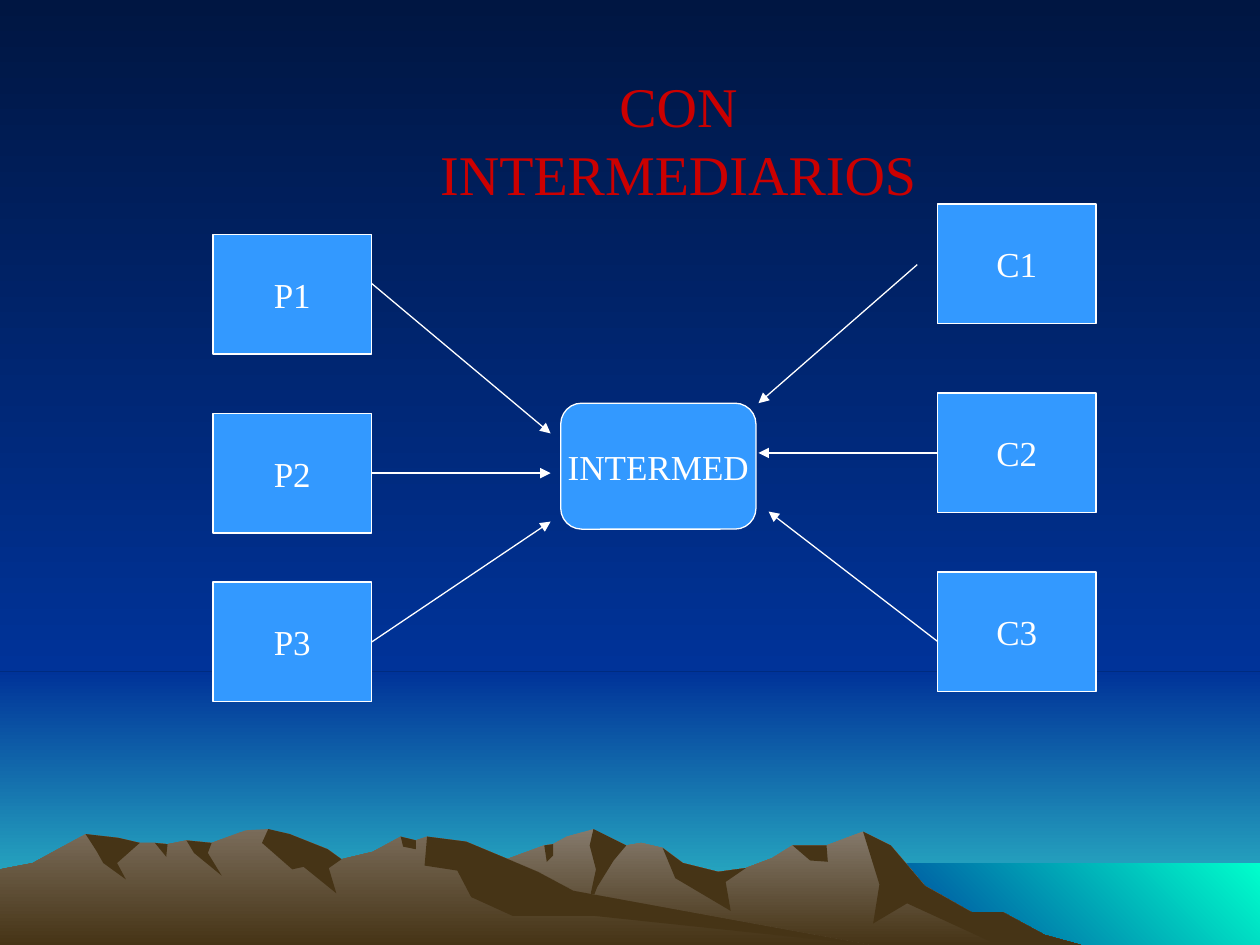
from dataclasses import dataclass

from lxml.etree import SubElement
from pptx import Presentation
from pptx.dml.color import RGBColor
from pptx.enum.shapes import MSO_CONNECTOR, MSO_SHAPE
from pptx.enum.text import MSO_ANCHOR, PP_ALIGN
from pptx.oxml.ns import qn
from pptx.util import Inches, Pt

FONT = "Times New Roman"
WHITE = RGBColor(0xFF, 0xFF, 0xFF)
RED = RGBColor(0xCC, 0x00, 0x00)
BOX_BLUE = RGBColor(0x33, 0x99, 0xFF)
NIGHT = RGBColor(0x00, 0x16, 0x42)
DEEP_BLUE = RGBColor(0x00, 0x33, 0x99)
HORIZON = RGBColor(0x33, 0xCC, 0xCC)
SEA_GREEN = RGBColor(0x00, 0xFF, 0xCC)
EARTH = RGBColor(0x46, 0x34, 0x16)
FAR_ROCK = RGBColor(0x85, 0x7A, 0x6C)
NEAR_ROCK = RGBColor(0x7A, 0x6C, 0x5A)

PAGE_WIDTH, PAGE_HEIGHT = 10, 7.5
SKY_HEIGHT, SEA_LEFT, SEA_TOP = 5.33, 6.83, 6.85
DOWN, UP_RIGHT = 270, 45
BOX_WIDTH, BOX_HEIGHT = 1.26, 0.95
PRODUCER_LEFT, CONSUMER_LEFT = 1.69, 7.44
LEFT_SIDE, RIGHT_SIDE = 1, 3


@dataclass
class Mountains:
    rock: RGBColor
    skyline: list
    folds: dict


@dataclass
class Party:
    label: str
    top: float
    tip: tuple
    start: tuple = None

    @property
    def middle(self):
        return self.top + BOX_HEIGHT / 2


FAR_MOUNTAINS = Mountains(
    FAR_ROCK,
    skyline=[
        (2.58, 7.5), (3.27, 7.09), (3.94, 6.85), (4.32, 6.71), (4.39, 6.7), (4.5, 6.64),
        (4.71, 6.58), (4.97, 6.71), (5.09, 6.69), (5.26, 6.73), (5.42, 6.85), (5.7, 6.92),
        (5.92, 6.89), (6.13, 6.81), (6.29, 6.71), (6.56, 6.71), (6.85, 6.6), (7.07, 6.71),
        (7.34, 7.03), (7.71, 7.24), (7.96, 7.24), (8.29, 7.42), (8.58, 7.5)],
    folds={
        (4.32, 4.39): [(4.39, 6.79), (4.34, 6.84)],
        (4.71, 4.97): [(4.87, 6.83), (4.74, 7.04), (4.65, 7.27), (4.73, 6.9), (4.68, 6.71)],
        (5.26, 5.92): [(5.76, 7), (5.8, 7.23), (5.36, 6.97)],
        (6.29, 6.56): [(6.57, 6.84), (6.43, 6.83)],
        (6.85, 8.58): [(7.92, 7.5), (7.2, 7.17), (6.93, 7.33), (6.98, 7.02)]})

NEAR_MOUNTAINS = Mountains(
    NEAR_ROCK,
    skyline=[
        (0, 6.9), (0.26, 6.85), (0.46, 6.74), (0.68, 6.62), (0.94, 6.65), (1.11, 6.69),
        (1.23, 6.69), (1.33, 6.7), (1.48, 6.67), (1.68, 6.69), (1.95, 6.59), (2.13, 6.58),
        (2.3, 6.62), (2.6, 6.74), (2.71, 6.82), (2.96, 6.76), (3.18, 6.64), (3.3, 6.67),
        (3.39, 6.64), (3.7, 6.68), (4.01, 6.81), (4.27, 6.92), (4.55, 7.07), (6.9, 7.5)],
    folds={
        (0.68, 1.11): [(0.93, 6.85), (1, 6.98), (0.82, 6.85), (0.77, 6.76)],
        (1.23, 1.33): [(1.32, 6.8)],
        (1.48, 1.68): [(1.65, 6.77), (1.76, 6.95), (1.54, 6.77)],
        (2.13, 2.71): [(2.61, 6.89), (2.67, 7.09), (2.41, 6.88), (2.32, 6.9), (2.08, 6.69)],
        (3.18, 3.3): [(3.3, 6.74), (3.2, 6.72)],
        (3.39, 6.9): [(4.72, 7.27), (4.07, 7.27), (3.74, 7.12), (3.63, 6.91), (3.37, 6.87)]})

PRODUCERS = [
    Party("P1", 1.86, tip=(4.37, 3.44), start=(2.95, 2.25)),
    Party("P2", 3.28, tip=(4.37, 3.755)),
    Party("P3", 4.62, tip=(4.37, 4.14))]
CONSUMERS = [
    Party("C1", 1.62, tip=(6.02, 3.2), start=(7.28, 2.1)),
    Party("C2", 3.12, tip=(6.02, 3.595)),
    Party("C3", 4.54, tip=(6.1, 4.06), start=(7.44, 5.09))]


def fill_gradient(fill, start, end, angle=DOWN):
    fill.gradient()
    fill.gradient_angle = angle
    for stop, color in zip(fill.gradient_stops, (start, end)):
        stop.color.rgb = color


def fill_solid(shape, color):
    shape.fill.solid()
    shape.fill.fore_color.rgb = color


def add_band(page, left, top, width, height, start, end, angle=DOWN):
    band = page.shapes.add_shape(
        MSO_SHAPE.RECTANGLE, Inches(left), Inches(top), Inches(width), Inches(height))
    band.shadow.inherit = False
    band.line.fill.background()
    fill_gradient(band.fill, start, end, angle)


def add_outline(page, points):
    corners = [(Inches(across), Inches(down)) for across, down in points]
    builder = page.shapes.build_freeform(*corners[0])
    builder.add_line_segments(corners[1:], close=True)
    outline = builder.convert_to_shape()
    outline.shadow.inherit = False
    outline.line.fill.background()
    return outline


def add_mountains(page, mountains):
    skyline = mountains.skyline
    base = [(skyline[-1][0], PAGE_HEIGHT), (skyline[0][0], PAGE_HEIGHT)]
    fill_gradient(add_outline(page, skyline + base).fill, mountains.rock, EARTH)
    for (left, right), foot in mountains.folds.items():
        crest = [point for point in skyline if left <= point[0] <= right]
        fill_solid(add_outline(page, crest + foot), EARTH)


def add_landscape(page):
    add_band(page, 0, SKY_HEIGHT, PAGE_WIDTH, PAGE_HEIGHT - SKY_HEIGHT, DEEP_BLUE, HORIZON)
    add_band(page, 0, 0, PAGE_WIDTH, SKY_HEIGHT, NIGHT, DEEP_BLUE)
    add_band(page, SEA_LEFT, SEA_TOP, PAGE_WIDTH - SEA_LEFT, PAGE_HEIGHT - SEA_TOP,
             DEEP_BLUE, SEA_GREEN, UP_RIGHT)
    for mountains in (FAR_MOUNTAINS, NEAR_MOUNTAINS):
        add_mountains(page, mountains)


def format_text(para, size, color):
    para.alignment = PP_ALIGN.CENTER
    for span in para.runs:
        span.font.name = FONT
        span.font.size = Pt(size)
        span.font.color.rgb = color


def add_title(page, text):
    title = page.shapes.title
    title.left, title.top = Inches(2.87), Inches(0.52)
    title.width, title.height = Inches(5.03), Inches(0.63)
    frame = title.text_frame
    frame.text = text
    frame.word_wrap = True
    frame.vertical_anchor = MSO_ANCHOR.TOP
    frame.margin_left = frame.margin_right = Inches(0.15)
    format_text(frame.paragraphs[0], 32, RED)
    title.element.getparent().append(title.element)


def add_box(page, text, left, top, width=BOX_WIDTH, height=BOX_HEIGHT,
            kind=MSO_SHAPE.RECTANGLE):
    box = page.shapes.add_shape(
        kind, Inches(left), Inches(top), Inches(width), Inches(height))
    box.shadow.inherit = False
    fill_solid(box, BOX_BLUE)
    box.line.color.rgb = WHITE
    box.line.width = Pt(0.75)
    frame = box.text_frame
    frame.text = text
    frame.word_wrap = False
    frame.vertical_anchor = MSO_ANCHOR.MIDDLE
    format_text(frame.paragraphs[0], 20, WHITE)
    return box


def add_arrow(page, start, tip):
    arrow = page.shapes.add_connector(
        MSO_CONNECTOR.STRAIGHT, *(Inches(value) for value in start + tip))
    arrow.line.color.rgb = WHITE
    arrow.line.width = Pt(0.75)
    properties = arrow.element.spPr
    SubElement(properties.find(qn("a:ln")), qn("a:tailEnd"), type="triangle")
    SubElement(properties, qn("a:effectLst"))
    return arrow


def add_parties(page, parties, left, side):
    edge = left + BOX_WIDTH if side == RIGHT_SIDE else left
    for party in parties:
        box = add_box(page, party.label, left, party.top)
        arrow = add_arrow(page, party.start or (edge, party.middle), party.tip)
        if party.start is None:
            arrow.begin_connect(box, side)


def main():
    deck = Presentation()
    deck.slide_width, deck.slide_height = Inches(PAGE_WIDTH), Inches(PAGE_HEIGHT)
    page = deck.slides.add_slide(deck.slide_layouts[5])
    fill_gradient(page.background.fill, NIGHT, DEEP_BLUE)
    add_landscape(page)
    add_title(page, "CON INTERMEDIARIOS")
    add_box(page, "INTERMED", 4.45, 3.2, 1.55, 1, MSO_SHAPE.ROUNDED_RECTANGLE)
    add_parties(page, PRODUCERS, PRODUCER_LEFT, RIGHT_SIDE)
    add_parties(page, CONSUMERS, CONSUMER_LEFT, LEFT_SIDE)
    deck.save("out.pptx")


if __name__ == "__main__":
    main()
